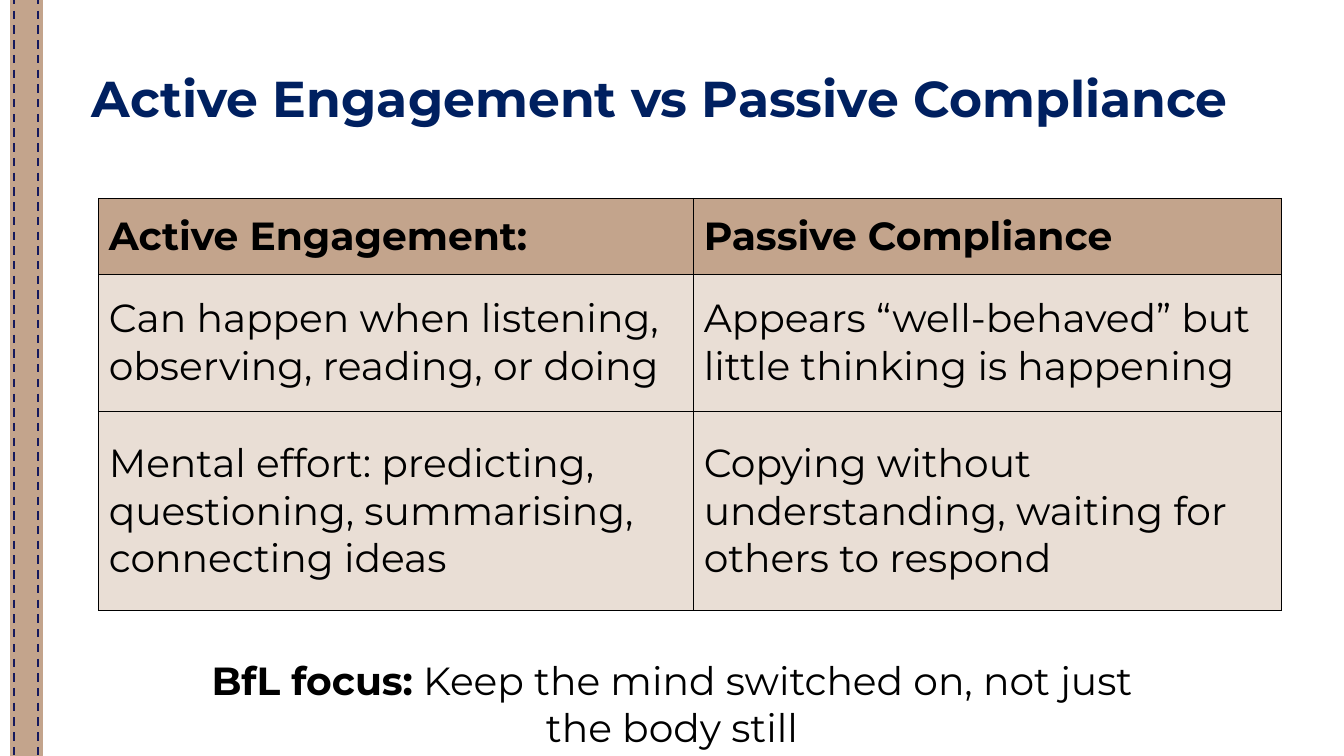
from dataclasses import dataclass

from lxml.etree import SubElement
from pptx import Presentation
from pptx.dml.color import RGBColor
from pptx.enum.dml import MSO_LINE_DASH_STYLE as Dash
from pptx.enum.shapes import MSO_CONNECTOR as Connector, MSO_SHAPE as Shape
from pptx.enum.text import MSO_ANCHOR as Anchor, MSO_AUTO_SIZE as AutoSize, PP_ALIGN as Align
from pptx.oxml import parse_xml
from pptx.oxml.ns import nsdecls, qn
from pptx.util import Inches, Pt


@dataclass(frozen=True)
class Theme:
    font: str = "Montserrat"
    title_size: int = 36
    text_size: int = 28
    title_color: str = "002060"
    text_color: str = "000000"
    band_color: str = "C3A48C"
    stitch_color: str = "15195D"
    border_width: float = 1
    body_opacity: int = 36


def set_all(target, values):
    for name, value in values.items():
        setattr(target, name, value)


def box(left, top, width, height):
    return [Inches(length) for length in (left, top, width, height)]


class SlideBuilder:
    def __init__(self, slide, theme):
        self.slide = slide
        self.theme = theme

    def add_run(self, paragraph, text, bold=False, size=None, color=None):
        run = paragraph.add_run()
        run.text = text
        set_all(run.font, {"name": self.theme.font, "bold": bold,
                           "size": Pt(size or self.theme.text_size)})
        run.font.color.rgb = RGBColor.from_string(color or self.theme.text_color)

    def add_title(self, text, place):
        title = self.slide.shapes.title
        set_all(title, dict(zip(("left", "top", "width", "height"), box(*place))))
        set_all(title.text_frame, {"auto_size": AutoSize.NONE, "word_wrap": True,
                                   "vertical_anchor": Anchor.TOP})
        paragraph = title.text_frame.paragraphs[0]
        set_all(paragraph, {"alignment": Align.LEFT, "line_spacing": 0.9})
        self.add_run(paragraph, text, True, self.theme.title_size, self.theme.title_color)

    def add_band(self, place):
        band = self.slide.shapes.add_shape(Shape.RECTANGLE, *box(*place))
        band.shadow.inherit = False
        color = RGBColor.from_string(self.theme.band_color)
        band.fill.solid()
        band.fill.fore_color.rgb = color
        band.line.color.rgb = color
        band.line.width = Pt(0.75)

    def add_stitch(self, x, top, bottom):
        stitch = self.slide.shapes.add_connector(
            Connector.STRAIGHT, *box(x, top, x, bottom))
        stitch.line.color.rgb = RGBColor.from_string(self.theme.stitch_color)
        set_all(stitch.line, {"width": Pt(1.5), "dash_style": Dash.DASH})
        SubElement(stitch._element.spPr, qn("a:effectLst"))

    def style_cell(self, cell, text, header):
        cell.vertical_anchor = Anchor.MIDDLE
        if header:
            cell.margin_right = 0
        self.add_run(cell.text_frame.paragraphs[0], text, bold=header)
        cell.fill.solid()
        cell.fill.fore_color.rgb = RGBColor.from_string(self.theme.band_color)
        properties = cell._tc.get_or_add_tcPr()
        if not header:
            color = properties.find(".//" + qn("a:srgbClr"))
            SubElement(color, qn("a:alpha"), val=str(self.theme.body_opacity * 1000))
        # Borders come before the fill in the cell properties
        for index, side in enumerate("LRTB"):
            properties.insert(index, parse_xml(
                f'<a:ln{side} {nsdecls("a")} w="{Pt(self.theme.border_width)}"><a:solidFill>'
                f'<a:srgbClr val="{self.theme.text_color}"/></a:solidFill></a:ln{side}>'))

    def add_table(self, rows, left, top, widths, heights):
        place = box(left, top, sum(widths), sum(heights))
        table = self.slide.shapes.add_table(len(heights), len(widths), *place).table
        for column, width in zip(table.columns, widths):
            column.width = Inches(width)
        for row_index, (texts, height) in enumerate(zip(rows, heights)):
            table.rows[row_index].height = Inches(height)
            for cell, text in zip(table.rows[row_index].cells, texts):
                self.style_cell(cell, text, header=row_index == 0)

    def add_focus(self, label, text, place):
        frame = self.slide.shapes.add_textbox(*box(*place)).text_frame
        set_all(frame, {"word_wrap": True, "auto_size": AutoSize.SHAPE_TO_FIT_TEXT})
        paragraph = frame.paragraphs[0]
        paragraph.alignment = Align.CENTER
        self.add_run(paragraph, label, bold=True)
        self.add_run(paragraph, text)


COMPARISON = [
    ("Active Engagement:", "Passive Compliance"),
    ("Can happen when listening, observing, reading, or doing",
     "Appears “well-behaved” but little thinking is happening"),
    ("Mental effort: predicting, questioning, summarising, connecting ideas",
     "Copying without understanding, waiting for others to respond"),
]


def main():
    presentation = Presentation()
    set_all(presentation, {"slide_width": Inches(13.33), "slide_height": Inches(7.5)})
    title_only = presentation.slide_layouts[5]
    builder = SlideBuilder(presentation.slides.add_slide(title_only), Theme())

    # Stitched ribbon down the left edge
    builder.add_band((0.1, -0.01, 0.32, 7.51))
    for x in (0.14, 0.38):
        builder.add_stitch(x, -0.04, 7.53)

    # Title, comparison table and closing message
    builder.add_title("Active Engagement vs Passive Compliance", (0.81, 0.68, 11.9, 0.81))
    builder.add_table(COMPARISON, 0.98, 1.97, widths=(5.9, 5.83), heights=(0.75, 1.36, 1.98))
    builder.add_focus("BfL focus:", " Keep the mind switched on, not just the body still",
                      (1.98, 6.46, 9.37, 1.04))

    presentation.save("out.pptx")


if __name__ == "__main__":
    main()
